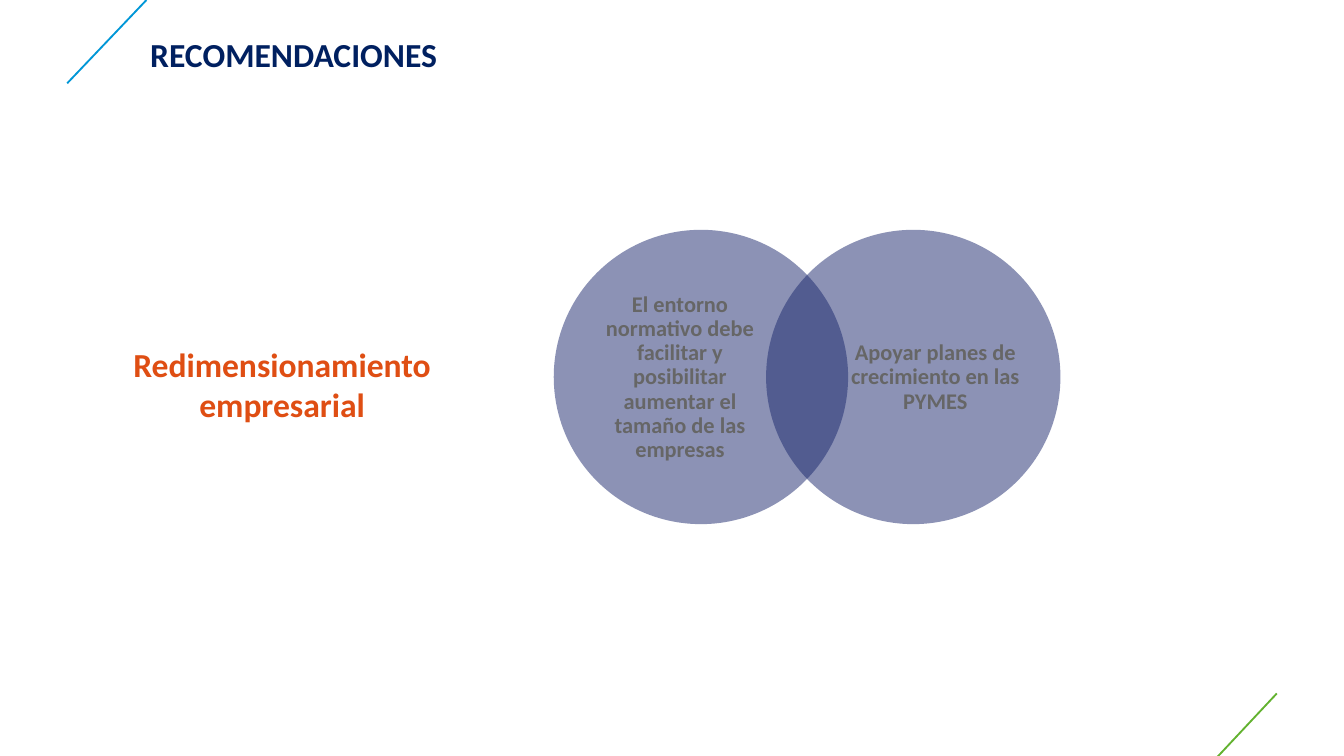
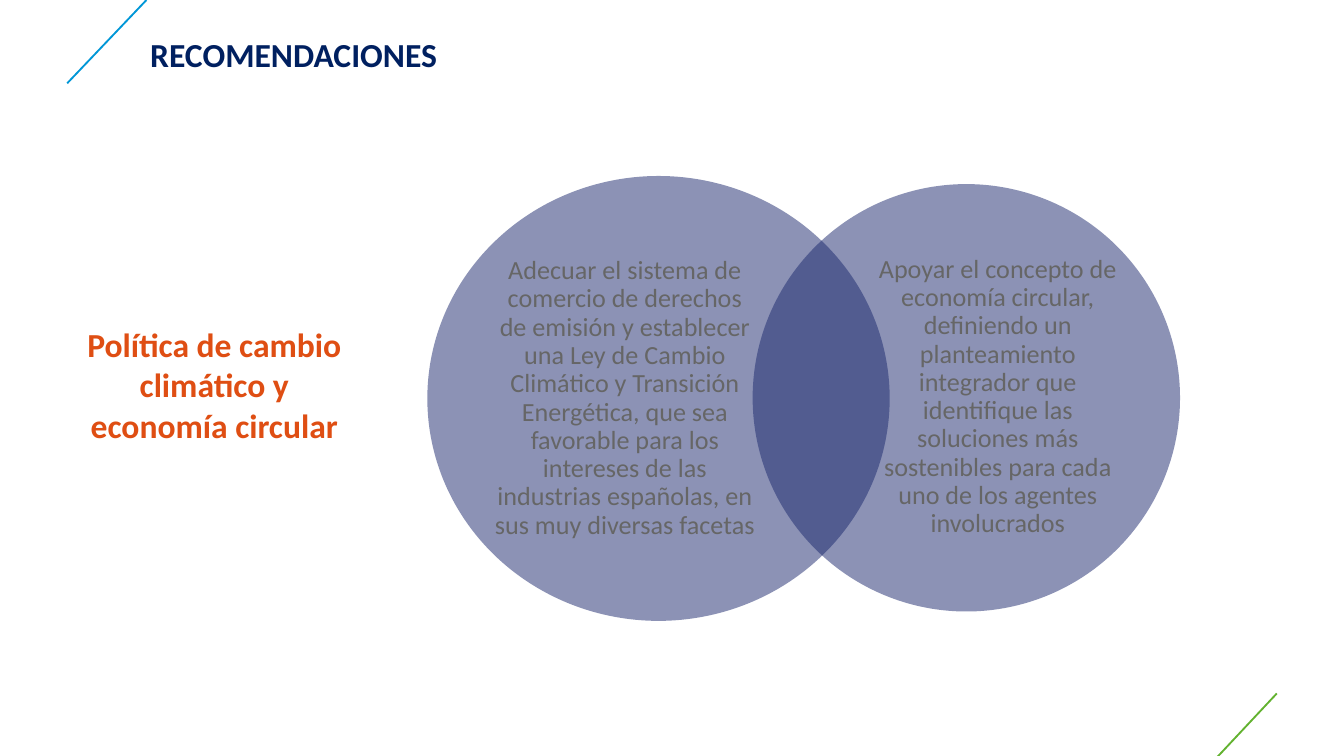
from lxml import etree
from pptx import Presentation
from pptx.dml.color import RGBColor
from pptx.enum.shapes import MSO_CONNECTOR, MSO_SHAPE
from pptx.enum.text import MSO_ANCHOR, MSO_AUTO_SIZE, PP_ALIGN
from pptx.oxml.ns import qn
from pptx.util import Inches, Pt

LINE, OVAL = MSO_CONNECTOR.STRAIGHT, MSO_SHAPE.OVAL
TOP, MIDDLE = MSO_ANCHOR.TOP, MSO_ANCHOR.MIDDLE
CENTER, NO_FIT = PP_ALIGN.CENTER, MSO_AUTO_SIZE.NONE

# Shared look
FONT = "Calibri"
NAVY = RGBColor(0x00, 0x20, 0x60)
INDIGO = RGBColor(0x1A, 0x27, 0x6D)
ORANGE = RGBColor(0xDF, 0x4E, 0x13)
GREY = RGBColor(0x66, 0x66, 0x66)
BLUE = RGBColor(0x00, 0x97, 0xD7)
GREEN = RGBColor(0x62, 0xB2, 0x2F)

TITLE_BOX = (0.82, 0.2, 2.73, 0.5)
CORNER_LINES = [((0.5, 0.62, 1.09, 0), BLUE), ((9.06, 5.63, 9.5, 5.16), GREEN)]

# Each circle: its box, its text box, its text
SLIDES = [
    {
        "topic": "Redimensionamiento empresarial",
        "topic_box": (0.88, 2.51, 2.44, 0.71),
        "font": {"size": Pt(12), "bold": True},
        "circles": [
            ((4.12, 1.71, 2.19, 2.19), (4.43, 1.97, 1.26, 1.68),
             "El entorno normativo debe facilitar y posibilitar aumentar "
             "el tamaño de las empresas"),
            ((5.7, 1.71, 2.19, 2.19), (6.33, 1.97, 1.26, 1.68),
             "Apoyar planes de crecimiento en las PYMES"),
        ],
    },
    {
        "topic": "Política de cambio climático y economía circular",
        "topic_box": (0.42, 2.36, 2.35, 1.01),
        "font": {"size": Pt(14), "bold": False},
        "circles": [
            ((3.18, 1.31, 3.44, 3.31), (3.66, 1.7, 1.98, 2.53),
             "Adecuar el sistema de comercio de derechos de emisión y "
             "establecer una Ley de Cambio Climático y Transición Energética, "
             "que sea favorable para los intereses de las industrias "
             "españolas, en sus muy diversas facetas"),
            ((5.6, 1.37, 3.18, 3.18), (6.51, 1.74, 1.83, 2.43),
             "Apoyar el concepto de economía circular, definiendo un "
             "planteamiento integrador que identifique las soluciones más "
             "sostenibles para cada uno de los agentes involucrados"),
        ],
    },
]


def inches(box):
    return [Inches(v) for v in box]


def set_attrs(obj, values):
    for name, value in values.items():
        setattr(obj, name, value)


def write_text(sp, text, color, font, frame=None, spacing=1.0):
    """Put one centred paragraph in a shape."""
    tf = sp.text_frame
    set_attrs(tf, {"word_wrap": True, "auto_size": NO_FIT,
                   "vertical_anchor": TOP, **(frame or {})})
    p = tf.paragraphs[0]
    set_attrs(p, {"alignment": CENTER, "line_spacing": spacing})
    r = p.add_run()
    r.text = text
    set_attrs(r.font, {"name": FONT, **font})
    r.font.color.rgb = color


def add_title(s, text):
    sp = s.shapes.title
    set_attrs(sp, dict(zip(("left", "top", "width", "height"), inches(TITLE_BOX))))
    write_text(sp, text, NAVY, {"size": Pt(18), "bold": True})


def add_corner_lines(s):
    for ends, color in CORNER_LINES:
        line = s.shapes.add_connector(LINE, *inches(ends))
        line.line.color.rgb = color
        line.line.width = Pt(1)
        etree.SubElement(line._element.spPr, qn("a:effectLst"))


def add_topic(s, box, text):
    sp = s.shapes.add_textbox(*inches(box))
    write_text(sp, text, ORANGE, {"size": Pt(18), "bold": True})


def add_circle(shapes, box):
    sp = shapes.add_shape(OVAL, *inches(box))
    sp.shadow.inherit = False
    sp.fill.solid()
    sp.fill.fore_color.rgb = INDIGO
    sp.line.fill.background()
    # Half transparent, so the overlap shows darker
    clr = sp._element.spPr.find(qn("a:solidFill"))[0]
    etree.SubElement(clr, qn("a:alpha"), val="50000")


def add_venn(s, circles, font):
    shapes = s.shapes.add_group_shape().shapes
    sides = ("left", "top", "right", "bottom")
    frame = {f"margin_{side}": 0 for side in sides}
    frame["vertical_anchor"] = MIDDLE
    for box, text_box, text in circles:
        add_circle(shapes, box)
        sp = shapes.add_textbox(*inches(text_box))
        write_text(sp, text, GREY, font, frame, 0.9)


def main():
    prs = Presentation()
    prs.slide_width, prs.slide_height = Inches(10), Inches(5.625)
    for content in SLIDES:
        s = prs.slides.add_slide(prs.slide_layouts[5])
        add_corner_lines(s)
        add_title(s, "RECOMENDACIONES")
        add_venn(s, content["circles"], content["font"])
        add_topic(s, content["topic_box"], content["topic"])
    prs.save("out.pptx")


if __name__ == "__main__":
    main()
